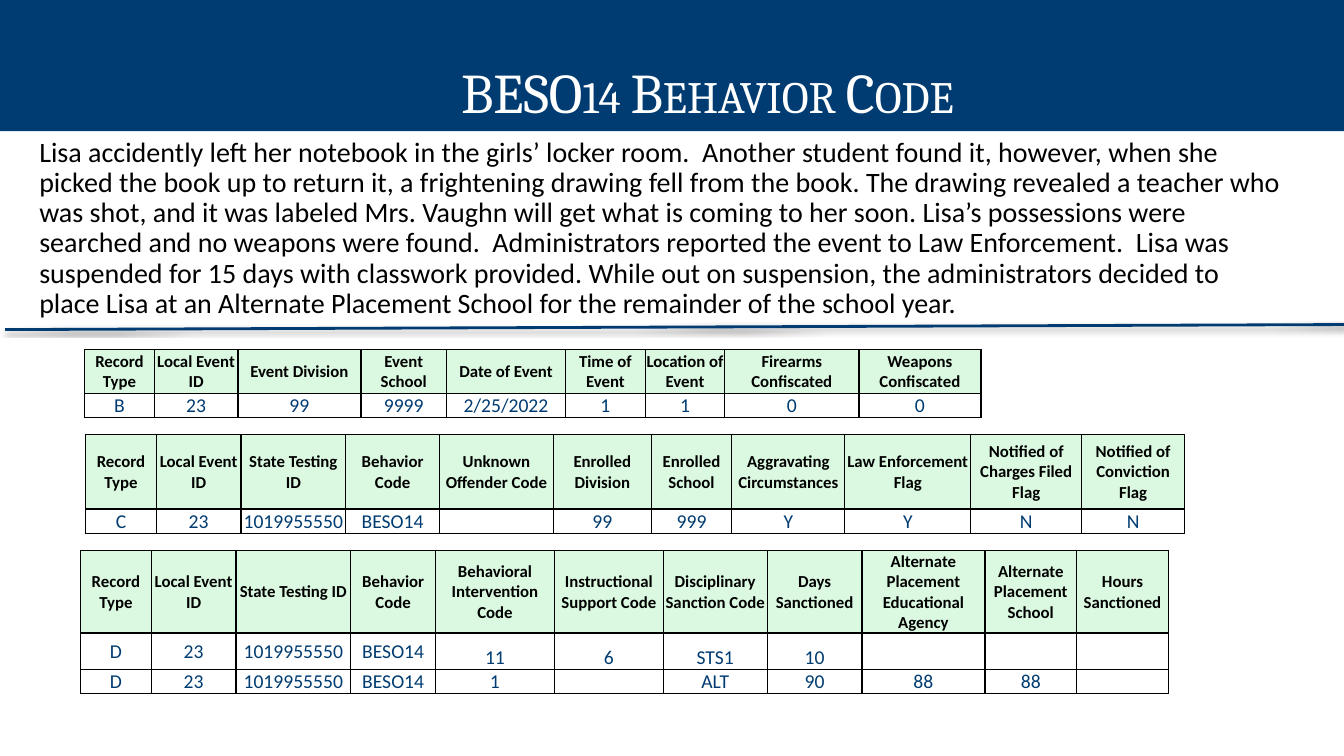
from lxml.etree import SubElement
from pptx import Presentation
from pptx.dml.color import RGBColor
from pptx.enum.shapes import MSO_CONNECTOR as Connector
from pptx.enum.text import MSO_ANCHOR as Anchor, PP_ALIGN as Align
from pptx.oxml.ns import qn
from pptx.util import Inches, Pt

NAVY, MINT, BLACK, WHITE = "003C71", "DAF9E0", "000000", "FFFFFF"
WIDTH, HEIGHT, BANNER = 13.33, 7.5, 1.3

TITLE = "BESO14 Behavior Code "
STORY = (
    "Lisa accidently left her notebook in the girls’ locker room.  Another student found it, "
    "however, when she picked the book up to return it, a frightening drawing fell from the book. "
    "The drawing revealed a teacher who was shot, and it was labeled Mrs. Vaughn will get what is "
    "coming to her soon. Lisa’s possessions were searched and no weapons were found.  "
    "Administrators reported the event to Law Enforcement.  Lisa was suspended for 15 days with "
    "classwork provided. While out on suspension, the administrators decided to place Lisa at an "
    "Alternate Placement School for the remainder of the school year."
)

RECORDS = [
    {
        "corner": (0.84, 3.47),
        "columns": [
            ("Record Type", 0.69), ("Local Event ID", 0.83), ("Event Division", 1.22),
            ("Event School", 0.85), ("Date of Event", 1.18), ("Time of Event", 0.79),
            ("Location of Event", 0.79), ("Firearms Confiscated", 1.33),
            ("Weapons Confiscated", 1.21),
        ],
        "heights": [0.43, 0.24],
        "values": [["B", "23", "99", "9999", "2/25/2022", "1", "1", "0", "0"]],
        "low_from": None,
    },
    {
        "corner": (0.85, 4.31),
        "columns": [
            ("Record Type", 0.7), ("Local Event ID", 0.84), ("State Testing ID", 1.04),
            ("Behavior Code", 0.93), ("Unknown Offender Code", 1.13),
            ("Enrolled Division", 0.97), ("Enrolled School", 0.8),
            ("Aggravating Circumstances", 1.12), ("Law Enforcement Flag", 1.25),
            ("Notified of Charges Filed Flag", 1.1), ("Notified of Conviction Flag", 1.02),
        ],
        "heights": [0.74, 0.24],
        "values": [["C", "23", "1019955550", "BESO14", "", "99", "999", "Y", "Y", "N", "N"]],
        "low_from": None,
    },
    {
        "corner": (0.8, 5.46),
        "columns": [
            ("Record Type", 0.7), ("Local Event ID", 0.84), ("State Testing ID", 1.14),
            ("Behavior Code", 0.84), ("Behavioral Intervention Code", 1.18),
            ("Instructional Support Code", 1.08), ("Disciplinary Sanction Code", 1.03),
            ("Days Sanctioned", 0.94), ("Alternate Placement Educational Agency", 1.22),
            ("Alternate Placement School", 0.91), ("Hours Sanctioned", 0.91),
        ],
        "heights": [0.82, 0.36, 0.24],
        "values": [
            ["D", "23", "1019955550", "BESO14", "11", "6", "STS1", "10", "", "", ""],
            ["D", "23", "1019955550", "BESO14", "1", "", "ALT", "90", "88", "88", ""],
        ],
        "low_from": 4,
    },
]


def paint(target, color):
    target.solid()
    target.fore_color.rgb = RGBColor.from_string(color)


def write(frame, text, size, color, font="Calibri", bold=False, small_caps=False,
          align=Align.LEFT, spacing=None):
    para = frame.paragraphs[0]
    para.alignment = align
    if spacing:
        para.line_spacing = spacing
    if not text:
        SubElement(para._p, qn("a:endParaRPr"), sz=str(size * 100))
        return
    span = para.add_run()
    span.text = text
    span.font.name, span.font.size, span.font.bold = font, Pt(size), bold
    span.font.color.rgb = RGBColor.from_string(color)
    if small_caps:
        span.font._element.set("cap", "small")


def set_margins(holder, left, top, right, bottom):
    holder.margin_left, holder.margin_top = Inches(left), Inches(top)
    holder.margin_right, holder.margin_bottom = Inches(right), Inches(bottom)


def add_borders(cell):
    properties = cell._tc.get_or_add_tcPr()
    for position, side in enumerate(("lnL", "lnR", "lnT", "lnB")):
        border = SubElement(properties, qn(f"a:{side}"), w="12700")
        fill = SubElement(border, qn("a:solidFill"))
        SubElement(fill, qn("a:srgbClr"), val=BLACK)
        properties.insert(position, border)


def add_record(slide, corner, columns, heights, values, low_from):
    names, widths = zip(*columns)
    rows = [names, *values]
    table = slide.shapes.add_table(
        len(rows), len(names), Inches(corner[0]), Inches(corner[1]),
        Inches(sum(widths)), Inches(sum(heights))).table
    table.first_row = table.horz_banding = False
    for column, width in zip(table.columns, widths):
        column.width = Inches(width)
    for row_index, row in enumerate(rows):
        table.rows[row_index].height = Inches(heights[row_index])
        header = row_index == 0
        for column_index, text in enumerate(row):
            cell = table.cell(row_index, column_index)
            set_margins(cell, 0.01, 0.01, 0.01, 0)
            low = not header and low_from is not None and column_index >= low_from
            cell.vertical_anchor = Anchor.BOTTOM if low else Anchor.MIDDLE
            if header:
                paint(cell.fill, MINT)
            else:
                cell.fill.background()
            add_borders(cell)
            write(cell.text_frame, text, 12 if header else 14, BLACK if header else NAVY,
                  bold=header, align=Align.CENTER)


def add_divider(slide):
    divider = slide.shapes.add_connector(
        Connector.STRAIGHT, Inches(0.05), Inches(3.27), Inches(WIDTH), Inches(3.22))
    paint(divider.line.fill, NAVY)
    divider.line.width = Pt(2)
    effects = SubElement(divider.element.spPr, qn("a:effectLst"))
    shadow = SubElement(effects, qn("a:outerShdw"), blurRad=str(Pt(3.1)), dist=str(Pt(1.6)),
                        dir="5400000", rotWithShape="0")
    tint = SubElement(shadow, qn("a:srgbClr"), val=BLACK)
    SubElement(tint, qn("a:alpha"), val="38000")


def main():
    deck = Presentation()
    deck.slide_width, deck.slide_height = Inches(WIDTH), Inches(HEIGHT)
    page = deck.slides.add_slide(deck.slide_layouts[5])

    title = page.shapes.title
    title.left, title.top = 0, 0
    title.width, title.height = Inches(WIDTH), Inches(BANNER)
    paint(title.fill, NAVY)
    set_margins(title.text_frame, 0.9, 0.7, 0.1, 0.05)
    title.text_frame.vertical_anchor = Anchor.TOP
    write(title.text_frame, TITLE, 40, WHITE, font="Cambria", small_caps=True,
          align=Align.CENTER, spacing=0.8)

    box = page.shapes.add_textbox(Inches(0.26), Inches(BANNER), Inches(12.63), Inches(1.9))
    box.text_frame.word_wrap = True
    set_margins(box.text_frame, 0.13, 0.07, 0.13, 0.07)
    write(box.text_frame, STORY, 20, BLACK, spacing=0.9)

    add_divider(page)
    for record in RECORDS:
        add_record(page, **record)
    deck.save("out.pptx")


if __name__ == "__main__":
    main()
